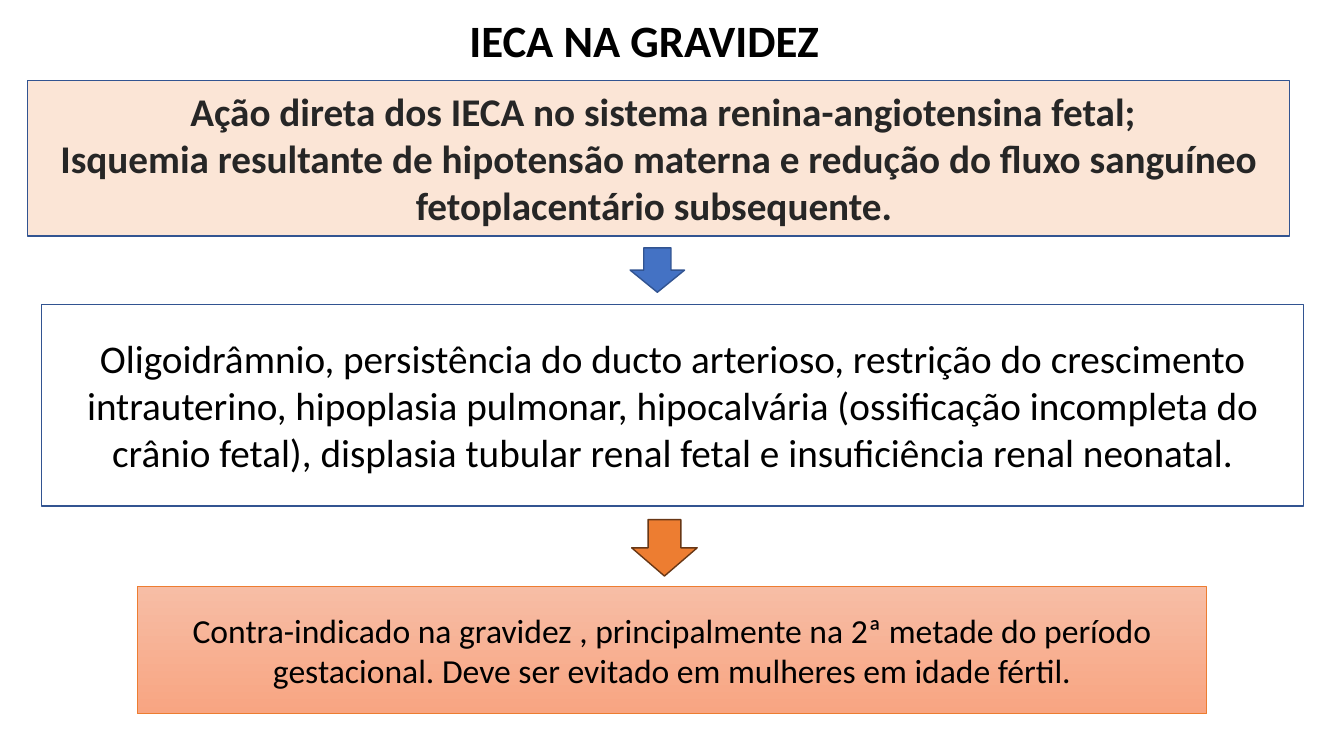
"""Build the slide on ACE inhibitors (IECA) in pregnancy."""
from pptx import Presentation
from pptx.dml.color import RGBColor
from pptx.enum.shapes import MSO_SHAPE
from pptx.enum.text import MSO_ANCHOR, MSO_AUTO_SIZE, PP_ALIGN
from pptx.util import Inches, Pt

COLORS = {
    "black": "000000", "charcoal": "262626", "white": "FFFFFF", "peach": "FBE5D6",
    "blue": "4472C4", "navy": "325491", "orange": "ED7D31", "brown": "683715",
    "salmon_light": "F7BDA5", "salmon": "F8A582",
}


def color(name):
    return RGBColor.from_string(COLORS[name])


def write(shape, lines, size, font_color, bold=False):
    frame = shape.text_frame
    frame.text = "\n".join(lines)
    frame.word_wrap = True
    frame.auto_size = MSO_AUTO_SIZE.NONE
    frame.vertical_anchor = MSO_ANCHOR.MIDDLE
    for para in frame.paragraphs:
        para.alignment = PP_ALIGN.CENTER
        for span in para.runs:
            span.font.name = "Calibri"
            span.font.size = Pt(size)
            span.font.bold = bold
            span.font.color.rgb = color(font_color)


deck = Presentation()
deck.slide_width = Inches(13.33)
deck.slide_height = Inches(7.5)
page = deck.slides.add_slide(deck.slide_layouts[5])

title = page.shapes.title
title.left, title.top = Inches(3.31), Inches(0.07)
title.width, title.height = Inches(6.16), Inches(0.71)
write(title, ["IECA NA GRAVIDEZ"], 32, "black", bold=True)
title.text_frame.paragraphs[0].line_spacing = 0.9

mechanism = [
    " Ação direta dos IECA no sistema renina-angiotensina fetal;",
    "Isquemia resultante de hipotensão materna e redução do fluxo sanguíneo "
    "fetoplacentário subsequente. ",
]
effects = [
    "Oligoidrâmnio, persistência do ducto arterioso, restrição do crescimento "
    "intrauterino, hipoplasia pulmonar, hipocalvária (ossificação incompleta do "
    "crânio fetal), displasia tubular renal fetal e insuficiência renal neonatal.",
]
advice = [
    "Contra-indicado na gravidez , principalmente na 2ª metade do período "
    "gestacional. Deve ser evitado em mulheres em idade fértil.",
]

boxes = [
    (0.27, 0.8, 12.52, 1.54, ["peach"], "navy", 1, mechanism, 28, "charcoal", True),
    (0.41, 3.02, 12.52, 2, ["white"], "navy", 1, effects, 28, "black", False),
    (1.36, 5.82, 10.61, 1.26, ["salmon_light", "salmon"], "orange", 0.5,
     advice, 24, "black", False),
]
for left, top, width, height, fills, line, weight, lines, size, font_color, bold in boxes:
    box = page.shapes.add_shape(
        MSO_SHAPE.RECTANGLE, Inches(left), Inches(top), Inches(width), Inches(height))
    box.shadow.inherit = False
    if len(fills) == 1:
        box.fill.solid()
        box.fill.fore_color.rgb = color(fills[0])
    else:
        box.fill.gradient()
        box.fill.gradient_angle = 270
        for stop, fill in zip(box.fill.gradient_stops, fills):
            stop.color.rgb = color(fill)
    box.line.color.rgb = color(line)
    box.line.width = Pt(weight)
    write(box, lines, size, font_color, bold)

arrows = [
    (MSO_SHAPE.DOWN_ARROW, 6.25, 2.46, 0.54, 0.44, 0, "blue", "navy"),
    (MSO_SHAPE.RIGHT_ARROW, 6.31, 5.11, 0.56, 0.65, 90, "orange", "brown"),
]
for kind, left, top, width, height, rotation, fill, line in arrows:
    arrow = page.shapes.add_shape(
        kind, Inches(left), Inches(top), Inches(width), Inches(height))
    arrow.rotation = rotation
    arrow.shadow.inherit = False
    arrow.fill.solid()
    arrow.fill.fore_color.rgb = color(fill)
    arrow.line.color.rgb = color(line)
    arrow.line.width = Pt(1)

deck.save("out.pptx")
